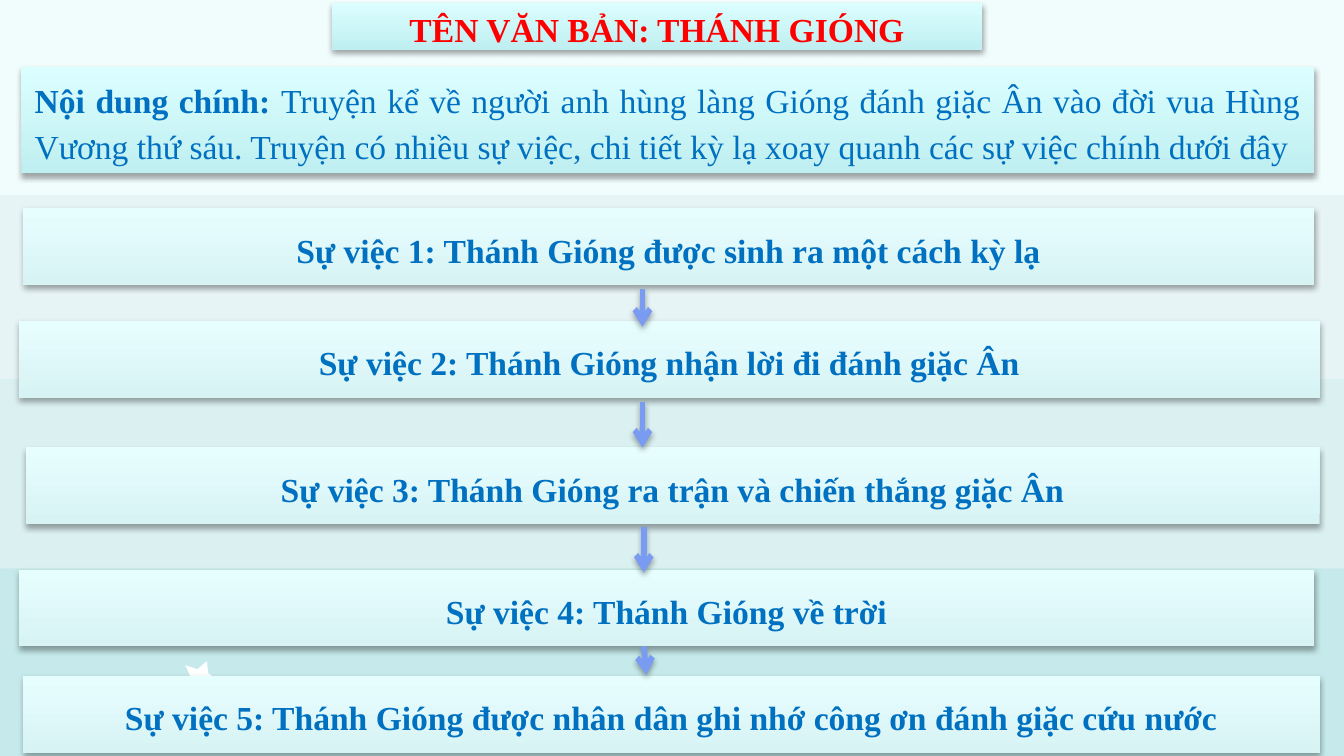
from lxml.etree import SubElement
from pptx import Presentation
from pptx.dml.color import RGBColor
from pptx.enum.shapes import MSO_CONNECTOR, MSO_SHAPE
from pptx.enum.text import MSO_ANCHOR as Anchor, PP_ALIGN as Align
from pptx.oxml.ns import qn
from pptx.util import Inches, Pt


def rgb(code):
    return RGBColor.from_string(code)


class StoryBoard:
    """Draws the elements of a story outline on one slide."""

    font = {"name": "Times New Roman", "size": Pt(18)}
    blue, red, arrow_blue = "0070C0", "FF0000", "799CF2"
    strong_panel = ("C0EFF1", "DBFEFF")
    soft_panel = ("D8F3F4", "E7FEFF")

    def __init__(self, slide):
        self.slide = slide

    def backdrop(self, code):
        fill = self.slide.background.fill
        fill.solid()
        fill.fore_color.rgb = rgb(code)

    def plain(self, shape, code):
        shape.fill.solid()
        shape.fill.fore_color.rgb = rgb(code)
        shape.line.fill.background()
        shape.shadow.inherit = False

    def rectangle(self, left, top, width, height):
        return self.slide.shapes.add_shape(
            MSO_SHAPE.RECTANGLE, *map(Inches, (left, top, width, height)))

    def band(self, top, bottom, code):
        self.plain(self.rectangle(0, top, 10, bottom - top), code)

    def star(self, points, code):
        builder = self.slide.shapes.build_freeform(
            *map(Inches, points[0]), scale=1.0)
        builder.add_line_segments(
            [tuple(map(Inches, point)) for point in points[1:]], close=True)
        self.plain(builder.convert_to_shape(), code)

    def soft_shadow(self, shape):
        effects = SubElement(shape._element.spPr, qn("a:effectLst"))
        shadow = SubElement(effects, qn("a:outerShdw"), blurRad=str(Pt(3.1)),
                            dist=str(Pt(1.8)), dir="5400000", rotWithShape="0")
        color = SubElement(shadow, qn("a:srgbClr"), val="000000")
        SubElement(color, qn("a:alpha"), val="35000")

    def panel(self, box, colors, runs, code, align=Align.CENTER, after=0):
        shape = self.rectangle(*box)
        shape.fill.gradient()
        shape.fill.gradient_angle = 90
        for stop, color in zip(shape.fill.gradient_stops, colors):
            stop.color.rgb = rgb(color)
        shape.line.fill.background()
        self.soft_shadow(shape)
        frame = shape.text_frame
        frame.word_wrap = True
        frame.vertical_anchor = Anchor.MIDDLE
        paragraph = frame.paragraphs[0]
        layout = {"alignment": align, "line_spacing": 1.15, "space_after": Pt(after)}
        for name, value in layout.items():
            setattr(paragraph, name, value)
        for text, bold in runs:
            run = paragraph.add_run()
            run.text = text
            for name, value in {**self.font, "bold": bold}.items():
                setattr(run.font, name, value)
            run.font.color.rgb = rgb(code)

    def arrow(self, *ends):
        connector = self.slide.shapes.add_connector(
            MSO_CONNECTOR.STRAIGHT, *map(Inches, ends))
        connector.line.color.rgb = rgb(self.arrow_blue)
        connector.line.width = Pt(3)
        SubElement(connector.line._get_or_add_ln(), qn("a:tailEnd"), type="arrow")
        self.soft_shadow(connector)


def main():
    deck = Presentation()
    width, height = 10, 10 * 9 / 16
    deck.slide_width, deck.slide_height = Inches(width), Inches(height)
    board = StoryBoard(deck.slides.add_slide(deck.slide_layouts[6]))

    board.backdrop("E7F4F5")
    for top, bottom, code in ((2.82, 4.23, "DBF0F1"), (4.23, height, "C6EAEB"),
                              (0, 1.45, "F1FCFC")):
        board.band(top, bottom, code)
    board.star(((1.54, 4.92), (1.55, 5.01), (1.62, 5.06), (1.54, 5.09),
                (1.51, 5.18), (1.46, 5.11), (1.36, 5.11), (1.42, 5.04),
                (1.38, 4.95), (1.47, 4.98)), "FFFFFF")

    summary = (
        ("Nội dung chính: ", True),
        ("Truyện kể về người anh hùng làng Gióng đánh giặc Ân vào đời vua Hùng "
         "Vương thứ sáu. Truyện có nhiều sự việc, chi tiết kỳ lạ xoay quanh "
         "các sự việc chính dưới đây", False),
    )
    board.panel((0.16, 0.5, 9.62, 0.79), board.strong_panel, summary,
                board.blue, Align.JUSTIFY, 10)
    board.panel((2.47, 0.02, 4.84, 0.35), board.strong_panel,
                [("TÊN VĂN BẢN: THÁNH GIÓNG", True)], board.red, after=10)

    events = (
        (0.17, 1.55, 9.61, "Thánh Gióng được sinh ra một cách kỳ lạ"),
        (0.14, 2.39, 9.68, "Thánh Gióng nhận lời đi đánh giặc Ân"),
        (0.19, 3.33, 9.63, "Thánh Gióng ra trận và chiến thắng giặc Ân"),
        (0.14, 4.24, 9.64, "Thánh Gióng về trời"),
        (0.17, 5.03, 9.65,
         "Thánh Gióng được nhân dân ghi nhớ công ơn đánh giặc cứu nước"),
    )
    for number, (left, top, length, event) in enumerate(events, 1):
        board.panel((left, top, length, 0.57), board.soft_panel,
                    [(f"Sự việc {number}: {event}", True)], board.blue)

    for ends in ((4.78, 2.15, 4.78, 2.43), (4.78, 2.99, 4.78, 3.33),
                 (4.79, 3.92, 4.79, 4.26), (4.79, 4.81, 4.81, 5.02)):
        board.arrow(*ends)

    deck.save("out.pptx")


if __name__ == "__main__":
    main()
